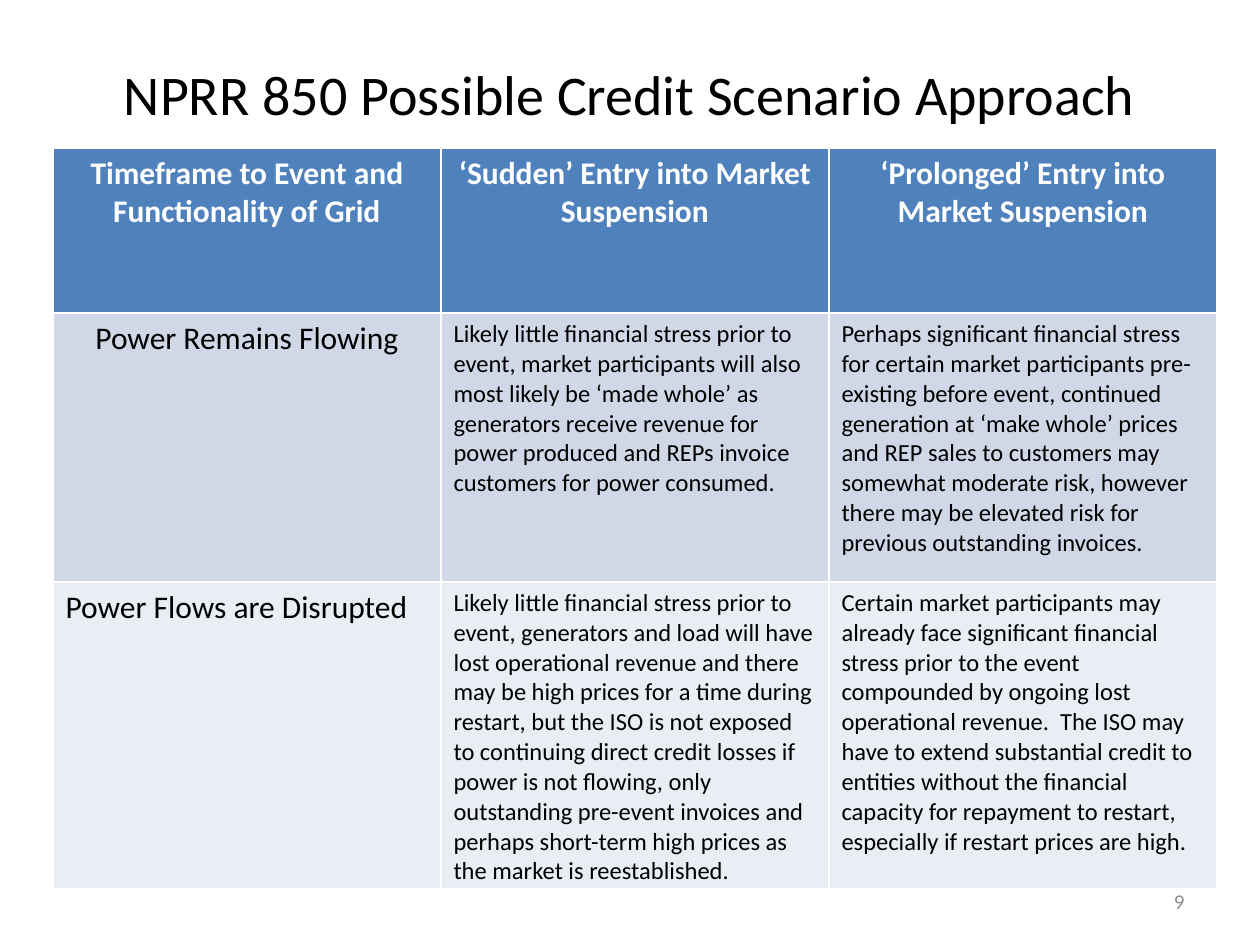
from pptx import Presentation
from pptx.dml.color import RGBColor
from pptx.enum.text import MSO_ANCHOR as Anchor, PP_ALIGN as Align
from pptx.util import Emu, Pt

EMU_PER_PX = 914400 / 126
COLUMN_WIDTH = 388
ROW_HEIGHTS = [165, 269, 269]
ROW_FILLS = ["4F81BD", "D0D8E8", "E9EDF4"]

HEADER = {"size": Pt(18), "bold": True, "color": "FFFFFF"}
LABEL = {"size": Pt(18), "bold": False, "color": "000000"}
BODY = {"size": Pt(14), "bold": False, "color": "000000"}

ROWS = [
    [
        ("Timeframe to Event and Functionality of Grid", HEADER, Align.CENTER),
        ("‘Sudden’ Entry into Market Suspension", HEADER, Align.CENTER),
        ("‘Prolonged’ Entry into Market Suspension", HEADER, Align.CENTER),
    ],
    [
        ("Power Remains Flowing", LABEL, Align.CENTER),
        ("Likely little financial stress prior to event, market participants will also "
         "most likely be ‘made whole’ as generators receive revenue for power produced "
         "and REPs invoice customers for power consumed.", BODY, Align.LEFT),
        ("Perhaps significant financial stress for certain market participants "
         "pre-existing before event, continued generation at ‘make whole’ prices and "
         "REP sales to customers may somewhat moderate risk, however there may be "
         "elevated risk for previous outstanding invoices.", BODY, Align.LEFT),
    ],
    [
        ("Power Flows are Disrupted", LABEL, Align.LEFT),
        ("Likely little financial stress prior to event, generators and load will have "
         "lost operational revenue and there may be high prices for a time during "
         "restart, but the ISO is not exposed to continuing direct credit losses if "
         "power is not flowing, only outstanding pre-event invoices and perhaps "
         "short-term high prices as the market is reestablished.", BODY, Align.LEFT),
        ("Certain market participants may already face significant financial stress "
         "prior to the event compounded by ongoing lost operational revenue.  The ISO "
         "may have to extend substantial credit to entities without the financial "
         "capacity for repayment to restart, especially if restart prices are high.",
         BODY, Align.LEFT),
    ],
]


def px(length):
    return Emu(round(length * EMU_PER_PX))


def rgb(value):
    return RGBColor.from_string(value)


class SlideBuilder:
    """Holds the font style and the current slide, and adds its elements."""

    font_name = "Calibri"

    def __init__(self, slide):
        self.slide = slide

    def fill_text(self, text_frame, text, style, alignment):
        text_frame.text = text
        paragraph = text_frame.paragraphs[0]
        paragraph.alignment = alignment
        font = paragraph.runs[0].font
        for name, value in {"name": self.font_name, **style}.items():
            if name == "color":
                font.color.rgb = rgb(value)
            else:
                setattr(font, name, value)

    def title(self, text, style, left, top, width, height):
        shape = self.slide.shapes.title
        box = {"left": left, "top": top, "width": width, "height": height}
        for name, value in box.items():
            setattr(shape, name, px(value))
        shape.text_frame.vertical_anchor = Anchor.MIDDLE
        self.fill_text(shape.text_frame, text, style, Align.CENTER)

    def text(self, text, style, alignment, *box):
        shape = self.slide.shapes.add_textbox(*map(px, box))
        shape.text_frame.word_wrap = True
        shape.text_frame.vertical_anchor = Anchor.MIDDLE
        self.fill_text(shape.text_frame, text, style, alignment)

    def table(self, rows, left, top):
        width = COLUMN_WIDTH * len(rows[0])
        box = map(px, (left, top, width, sum(ROW_HEIGHTS)))
        table = self.slide.shapes.add_table(len(rows), len(rows[0]), *box).table
        for column in table.columns:
            column.width = px(COLUMN_WIDTH)
        for row, height, fill, entries in zip(table.rows, ROW_HEIGHTS, ROW_FILLS, rows):
            row.height = px(height)
            for cell, entry in zip(row.cells, entries):
                cell.fill.solid()
                cell.fill.fore_color.rgb = rgb(fill)
                self.fill_text(cell.text_frame, *entry)


def main():
    presentation = Presentation()
    presentation.slide_width = px(1260)
    presentation.slide_height = px(945)
    builder = SlideBuilder(presentation.slides.add_slide(presentation.slide_layouts[5]))
    builder.title("NPRR 850 Possible Credit Scenario Approach",
                  {"size": Pt(32), "color": "000000"}, 63, 38, 1134, 110)
    builder.text("9", {"size": Pt(12), "color": "8C8C8C"}, Align.RIGHT,
                 903, 876, 294, 50)
    builder.table(ROWS, 53, 148)
    presentation.save("out.pptx")


if __name__ == "__main__":
    main()
